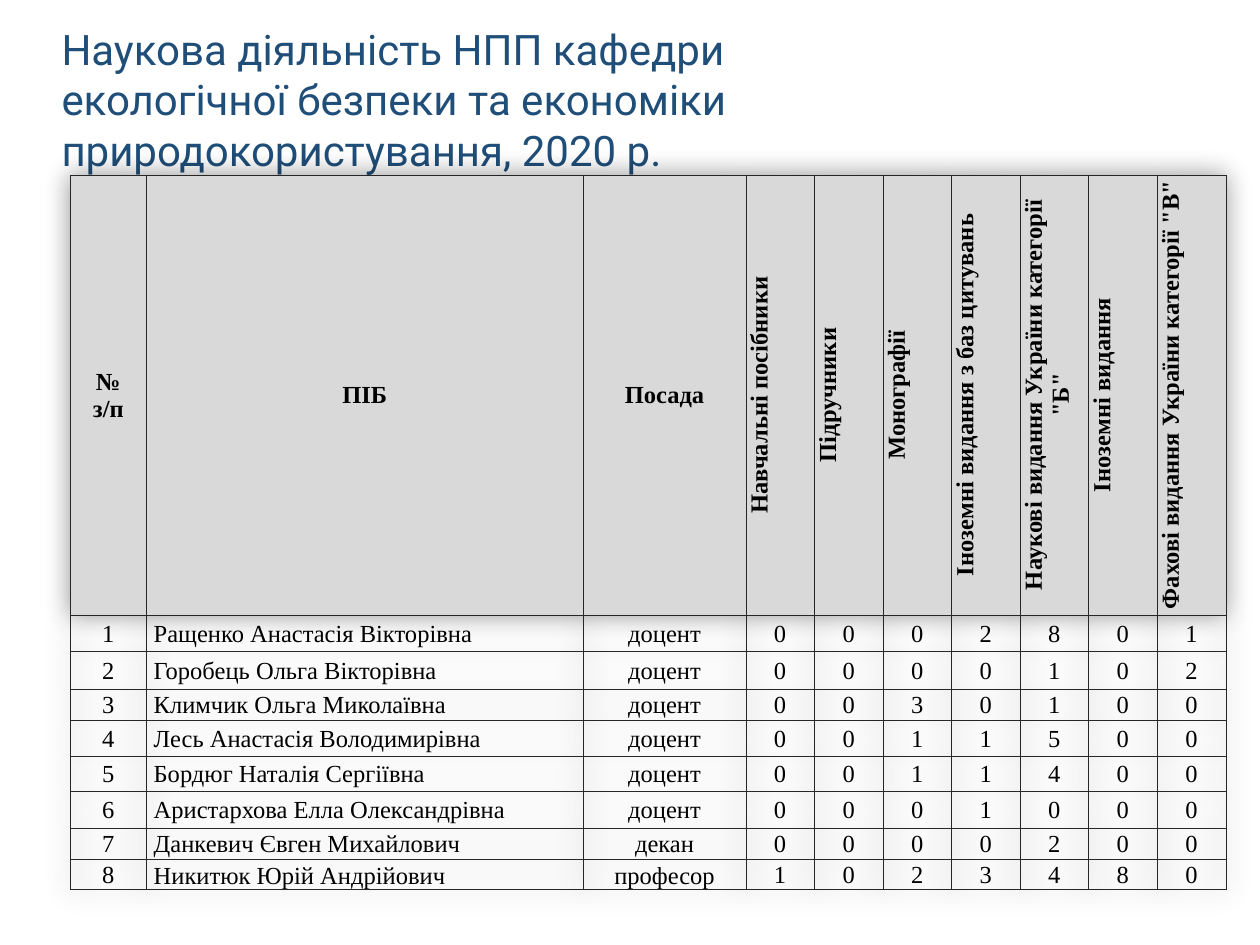
from dataclasses import dataclass

from lxml import etree
from pptx import Presentation
from pptx.dml.color import RGBColor
from pptx.enum.text import MSO_ANCHOR, PP_ALIGN
from pptx.oxml.ns import qn
from pptx.util import Inches, Pt

MIDDLE, BOTTOM = MSO_ANCHOR.MIDDLE, MSO_ANCHOR.BOTTOM
LEFT, CENTER = PP_ALIGN.LEFT, PP_ALIGN.CENTER
PLAIN_TABLE_STYLE = "{2D5ABB26-0587-4C30-8999-92F81FD0307C}"


@dataclass(frozen=True)
class Theme:
    title_color: str = "1F4E79"
    text_color: str = "000000"
    header_fill: str = "D9D9D9"
    border_color: str = "262626"
    title_font: str = "Roboto"
    table_font: str = "Times New Roman"
    title_size: int = 24
    table_size: int = 14
    border_width: float = 0.25


theme = Theme()


def write_lines(frame, text, align, color, **font_values):
    """Write one paragraph per line of text."""
    for index, line in enumerate(text.split("\n")):
        para = frame.add_paragraph() if index else frame.paragraphs[0]
        para.alignment = align
        span = para.add_run()
        span.text = line
        span.font.color.rgb = RGBColor.from_string(color)
        for name, value in font_values.items():
            setattr(span.font, name, value)


def add_borders(cell):
    properties = cell._tc.get_or_add_tcPr()
    for position, tag in enumerate(("a:lnL", "a:lnR", "a:lnT", "a:lnB")):
        line = etree.Element(qn(tag), w=str(Pt(theme.border_width)))
        fill = etree.SubElement(line, qn("a:solidFill"))
        etree.SubElement(fill, qn("a:srgbClr"), val=theme.border_color)
        properties.insert(position, line)


deck = Presentation()
deck.slide_width, deck.slide_height = Inches(10), Inches(7.5)
page = deck.slides.add_slide(deck.slide_layouts[6])

# Title
box = page.shapes.add_textbox(Inches(0.39), Inches(0.29), Inches(9.06), Inches(0.99))
box.text_frame.word_wrap = True
box.text_frame.vertical_anchor = MIDDLE
write_lines(
    box.text_frame,
    "Наукова діяльність НПП кафедри\n"
    "екологічної безпеки та економіки природокористування, 2020 р.",
    LEFT, theme.title_color, name=theme.title_font, size=Pt(theme.title_size),
)

# Table content
headers = [
    "№\nз/п", "ПІБ", "Посада", "Навчальні посібники", "Підручники", "Монографії",
    "Іноземні видання з баз цитувань", 'Наукові видання України категорії\n"Б"',
    "Іноземні видання", 'Фахові видання України категорії "В"',
]
staff = [
    ("Ращенко Анастасія Вікторівна", "доцент", (0, 0, 0, 2, 8, 0, 1)),
    ("Горобець Ольга Вікторівна", "доцент", (0, 0, 0, 0, 1, 0, 2)),
    ("Климчик Ольга Миколаївна", "доцент", (0, 0, 3, 0, 1, 0, 0)),
    ("Лесь Анастасія Володимирівна", "доцент", (0, 0, 1, 1, 5, 0, 0)),
    ("Бордюг Наталія Сергіївна", "доцент", (0, 0, 1, 1, 4, 0, 0)),
    ("Аристархова Елла Олександрівна", "доцент", (0, 0, 0, 1, 0, 0, 0)),
    ("Данкевич Євген Михайлович", "декан", (0, 0, 0, 0, 2, 0, 0)),
    ("Никитюк Юрій Андрійович", "професор", (1, 0, 2, 3, 4, 8, 0)),
]
rows = [headers] + [
    [number, name, post, *counts]
    for number, (name, post, counts) in enumerate(staff, start=1)
]

# Table grid
table_width = 9.17
text_widths = [0.6, 3.47, 1.29]
count_columns = len(headers) - len(text_widths)
count_width = (table_width - sum(text_widths)) / count_columns
column_widths = text_widths + [count_width] * count_columns
row_heights = [3.49, 0.29, 0.3, 0.23, 0.29, 0.28, 0.29, 0.23, 0.23]

table_frame = page.shapes.add_table(
    len(rows), len(headers), Inches(0.56), Inches(1.39),
    Inches(table_width), Inches(sum(row_heights)),
)
table = table_frame.table
table.horz_banding = False
for column, width in zip(table.columns, column_widths):
    column.width = Inches(width)
for row, height in zip(table.rows, row_heights):
    row.height = Inches(height)

# Soft shadow around the table
table_properties = table._tbl.tblPr
table_properties.find(qn("a:tableStyleId")).text = PLAIN_TABLE_STYLE
effects = etree.Element(qn("a:effectLst"))
table_properties.insert(0, effects)
shadow = etree.SubElement(
    effects, qn("a:outerShdw"), blurRad=str(Inches(0.2)), dist="0", algn="ctr"
)
shadow_color = etree.SubElement(shadow, qn("a:srgbClr"), val=theme.text_color)
etree.SubElement(shadow_color, qn("a:alpha"), val="40000")

for row_index, values in enumerate(rows):
    is_header = row_index == 0
    for column_index, value in enumerate(values):
        cell = table.cell(row_index, column_index)
        is_name = column_index == 1 and not is_header
        is_last_text = row_index == len(staff) and column_index in (1, 2)
        inset = 0 if is_header and column_index else 0.01
        cell_format = {
            "margin_left": Inches(0.06 if is_name else inset),
            "margin_right": Inches(inset),
            "margin_top": Inches(inset),
            "margin_bottom": 0,
            "vertical_anchor": BOTTOM if is_last_text else MIDDLE,
        }
        for name, setting in cell_format.items():
            setattr(cell, name, setting)
        if is_header:
            cell.fill.solid()
            cell.fill.fore_color.rgb = RGBColor.from_string(theme.header_fill)
            if column_index >= len(text_widths):
                cell._tc.get_or_add_tcPr().set("vert", "vert270")
        else:
            cell.fill.background()
        add_borders(cell)
        write_lines(
            cell.text_frame, str(value), LEFT if is_name else CENTER, theme.text_color,
            name=theme.table_font, size=Pt(theme.table_size), bold=is_header,
        )

deck.save("out.pptx")
